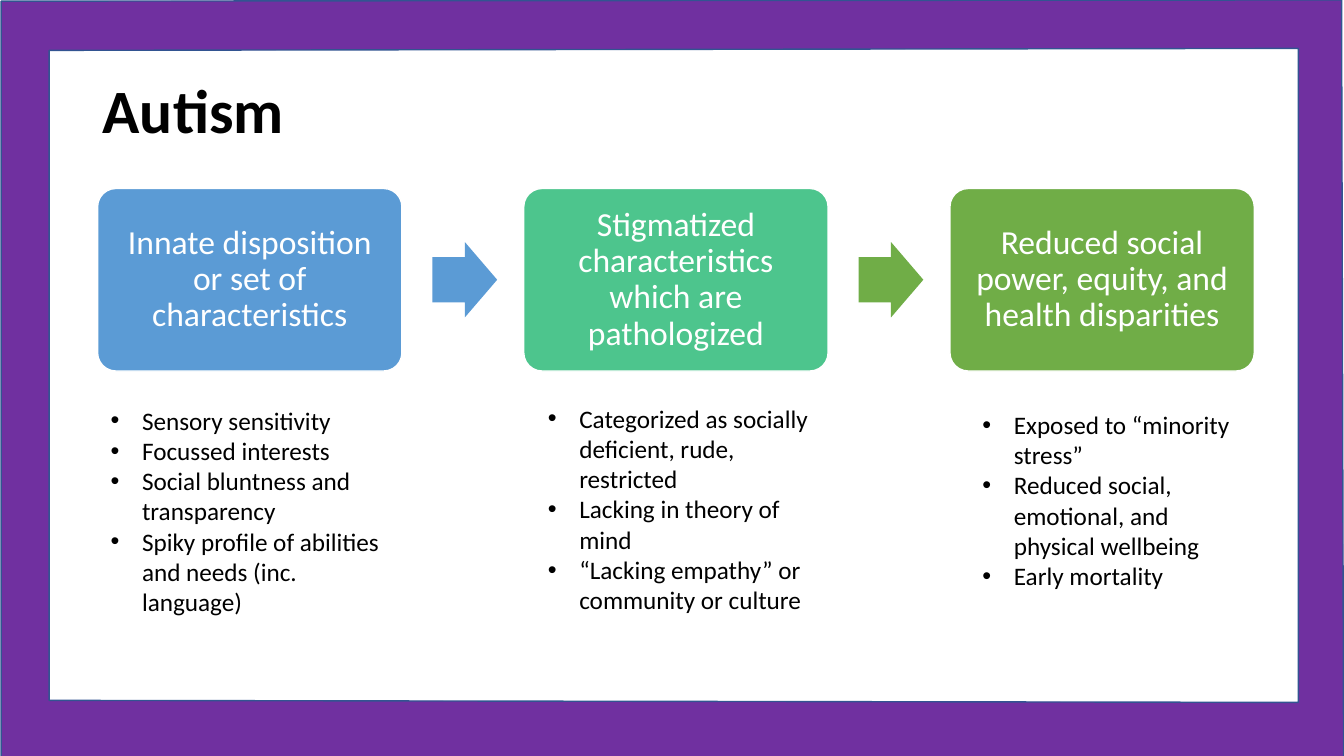
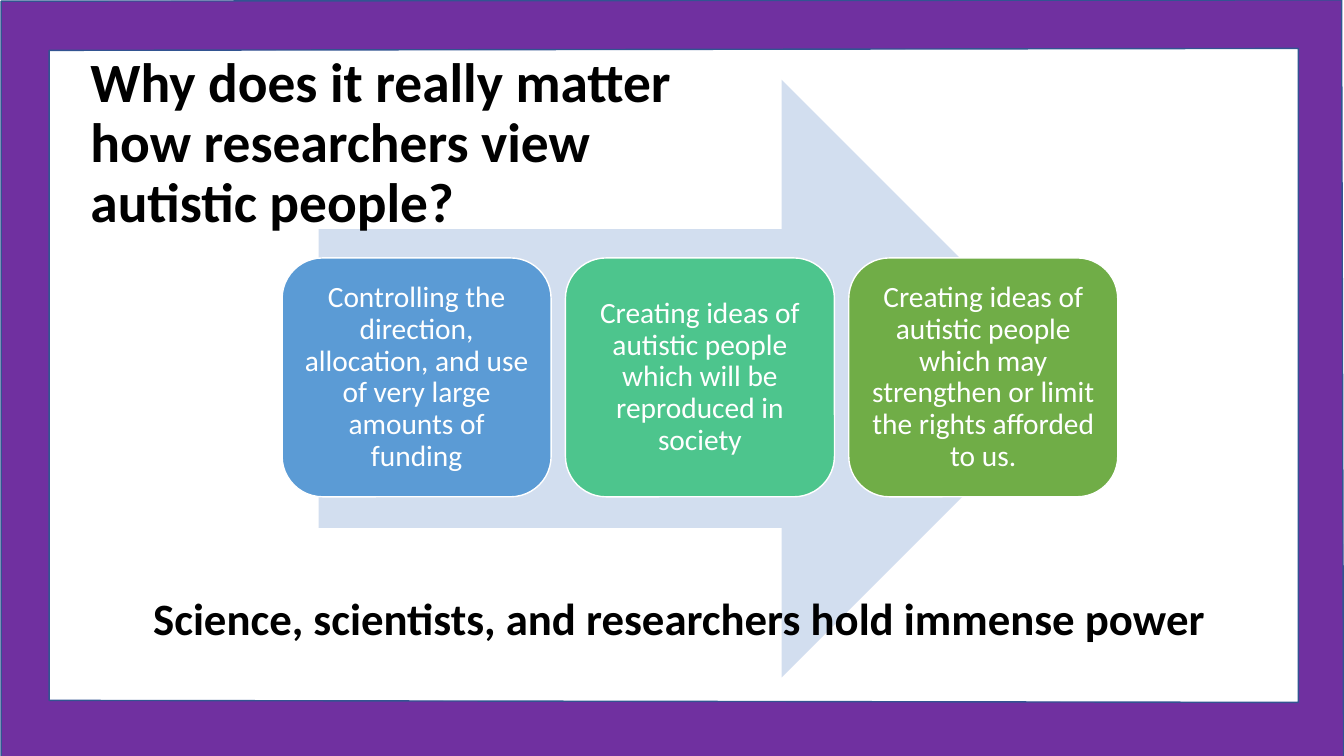
"""Build two slides about how autism is seen by society and by researchers."""
from lxml import etree
from pptx import Presentation
from pptx.dml.color import RGBColor
from pptx.enum.shapes import MSO_SHAPE
from pptx.enum.text import MSO_ANCHOR, PP_ALIGN
from pptx.oxml.ns import qn
from pptx.util import Cm, Pt

ROUNDED = MSO_SHAPE.ROUNDED_RECTANGLE
ARROW = MSO_SHAPE.RIGHT_ARROW
TOP, MIDDLE = MSO_ANCHOR.TOP, MSO_ANCHOR.MIDDLE
LEFT, CENTER = PP_ALIGN.LEFT, PP_ALIGN.CENTER

BLACK = RGBColor(0x00, 0x00, 0x00)
WHITE = RGBColor(0xFF, 0xFF, 0xFF)
PURPLE = RGBColor(0x70, 0x30, 0xA0)
NAVY = RGBColor(0x32, 0x54, 0x91)
BLUE = RGBColor(0x5B, 0x9B, 0xD5)
TEAL = RGBColor(0x4D, 0xC5, 0x8D)
GREEN = RGBColor(0x70, 0xAD, 0x47)
PALE_BLUE = RGBColor(0xD2, 0xDE, 0xEF)
CARD_COLORS = (BLUE, TEAL, GREEN)

FONT = "Calibri"
FRAME_OUTER = [(0.03, 0.03), (33.81, 0), (33.86, 19.15), (0.03, 19.15)]
FRAME_INNER = [(1.24, 1.27), (1.24, 17.65), (32.72, 17.7), (32.72, 1.22)]


class Deck:
    """Hold the shared style and the slide being filled."""

    def __init__(self):
        self.presentation = Presentation()
        self.presentation.slide_width = Cm(33.87)
        self.presentation.slide_height = Cm(19.05)
        self.slide = None

    def add_slide(self):
        """Start a blank slide with the purple frame."""
        layout = self.presentation.slide_layouts[6]
        self.slide = self.presentation.slides.add_slide(layout)
        outer, inner = (
            [(Cm(x), Cm(y)) for x, y in points]
            for points in (FRAME_OUTER, FRAME_INNER)
        )
        builder = self.slide.shapes.build_freeform(*outer[0])
        builder.add_line_segments(outer[1:])
        builder.move_to(*inner[0])
        builder.add_line_segments(inner[1:])
        self.paint(builder.convert_to_shape(), PURPLE, NAVY)

    def paint(self, shape, fill, line=None):
        """Give a shape its fill and outline, without shadow."""
        shape.shadow.inherit = False
        shape.fill.solid()
        shape.fill.fore_color.rgb = fill
        if line is None:
            shape.line.fill.background()
        else:
            shape.line.color.rgb = line
            shape.line.width = Pt(1)

    def fill_text(self, shape, lines, size, color=BLACK, bold=False,
                  align=LEFT, anchor=TOP, spacing=0.9, inset=None,
                  bullets=False):
        """Put one paragraph for each line of text into a shape."""
        frame = shape.text_frame
        frame_format = {"word_wrap": True, "vertical_anchor": anchor}
        if inset is not None:
            for side in ("left", "top", "right", "bottom"):
                frame_format[f"margin_{side}"] = Cm(inset)
        for name, value in frame_format.items():
            setattr(frame, name, value)
        font_format = {"name": FONT, "size": Pt(size), "bold": bold}
        for index, line in enumerate(lines):
            paragraph = frame.add_paragraph() if index else frame.paragraphs[0]
            paragraph.alignment = align
            paragraph.line_spacing = spacing
            if bullets:
                self.add_bullet(paragraph)
            run = paragraph.add_run()
            run.text = line
            for name, value in font_format.items():
                setattr(run.font, name, value)
            run.font.color.rgb = color

    def add_bullet(self, paragraph):
        """Give a paragraph a hanging bullet."""
        properties = paragraph._p.get_or_add_pPr()
        properties.set("marL", str(Cm(0.79)))
        properties.set("indent", str(-Cm(0.79)))
        etree.SubElement(properties, qn("a:buFont")).set("typeface", "Arial")
        etree.SubElement(properties, qn("a:buChar")).set("char", "•")

    def add_text(self, box, lines, size, **style):
        """Add a text box."""
        shape = self.slide.shapes.add_textbox(*map(Cm, box))
        self.fill_text(shape, lines, size, **style)

    def add_title(self, box, text, size=44):
        """Add a bold title."""
        self.add_text(box, [text], size, bold=True, anchor=MIDDLE)

    def add_list(self, box, items):
        """Add a bulleted list."""
        self.add_text(box, items, 18, spacing=1, bullets=True)

    def add_arrow(self, box, color, shaft=0.5):
        """Add a block arrow that points right."""
        shape = self.slide.shapes.add_shape(ARROW, *map(Cm, box))
        shape.adjustments[0] = shaft
        self.paint(shape, color)

    def add_cards(self, box, pitch, texts, size, rounding, inset):
        """Add a row of coloured cards at equal steps."""
        left, *rest = box
        for index, (text, color) in enumerate(zip(texts, CARD_COLORS)):
            place = (left + index * pitch, *rest)
            shape = self.slide.shapes.add_shape(ROUNDED, *map(Cm, place))
            shape.adjustments[0] = rounding
            self.paint(shape, color, WHITE)
            self.fill_text(shape, [text], size, color=WHITE, align=CENTER,
                           anchor=MIDDLE, inset=inset)


def build_autism(deck):
    """Show how a disposition leads to stigma and disparities."""
    deck.add_slide()
    deck.add_title((2.34, 1.02, 29.21, 3.68), "Autism")
    pitch = 10.74
    deck.add_cards((2.46, 4.75, 7.67, 4.6), pitch, (
        "Innate disposition or set of characteristics",
        "Stigmatized characteristics which are pathologized",
        "Reduced social power, equity, and health disparities",
    ), size=24, rounding=0.1, inset=0.25)
    for index, color in enumerate((BLUE, GREEN)):
        deck.add_arrow((10.9 + index * pitch, 6.1, 1.63, 1.9), color, 0.6)
    deck.add_list((2.54, 10.08, 7.62, 6.4), (
        "Sensory sensitivity",
        "Focussed interests",
        "Social bluntness and transparency",
        "Spiky profile of abilities and needs (inc. language)",
    ))
    deck.add_list((13.56, 10.03, 7.62, 6.4), (
        "Categorized as socially deficient, rude, restricted",
        "Lacking in theory of mind",
        "“Lacking empathy” or community or culture",
    ))
    deck.add_list((24.51, 10.19, 7.19, 4.88), (
        "Exposed to “minority stress”",
        "Reduced social, emotional, and physical wellbeing",
        "Early mortality",
    ))


def build_power(deck):
    """Show why the views of researchers matter."""
    deck.add_slide()
    deck.add_arrow((8.03, 2.01, 19.2, 15.06), PALE_BLUE)
    deck.add_cards((7.11, 6.5, 6.78, 6.02), 7.14, (
        "Controlling the direction, allocation, and use of very large "
        "amounts of funding",
        "Creating ideas of autistic people which will be reproduced in society",
        "Creating ideas of autistic people which may strengthen or limit "
        "the rights afforded to us.",
    ), size=21, rounding=0.17, inset=0.23)
    deck.add_text((3.61, 14.91, 30.25, 3.1),
                  ["Science, scientists, and researchers hold immense power"],
                  32, bold=True)
    deck.add_title((2.03, 1.8, 15.34, 3.68),
                   "Why does it really matter how researchers view "
                   "autistic people?", 39.6)


def main():
    """Build and save the presentation."""
    deck = Deck()
    build_autism(deck)
    build_power(deck)
    deck.presentation.save("out.pptx")


if __name__ == "__main__":
    main()
